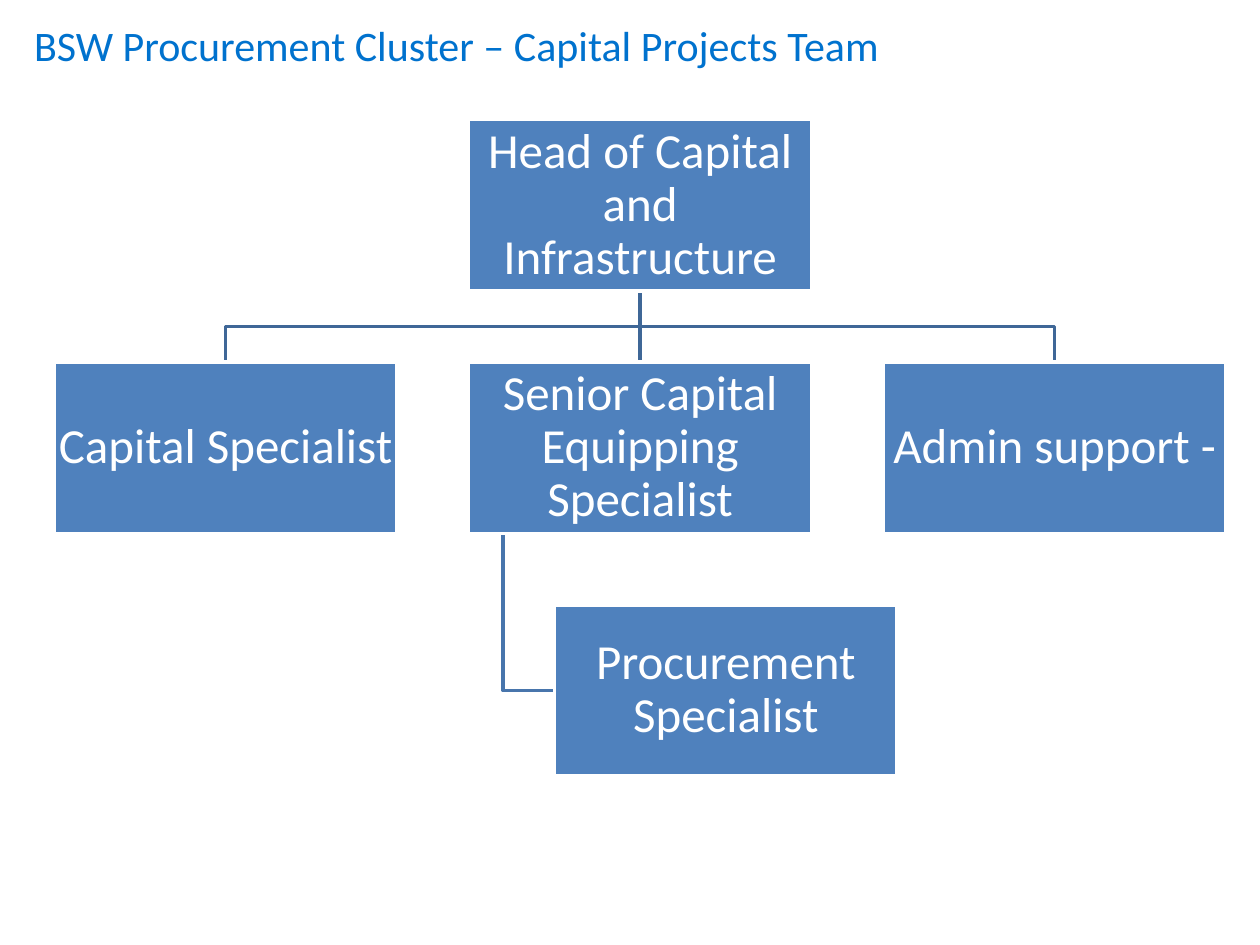
from pptx import Presentation
from pptx.dml.color import RGBColor
from pptx.enum.shapes import MSO_SHAPE
from pptx.enum.text import MSO_ANCHOR, PP_ALIGN
from pptx.util import Inches, Pt

RECT = MSO_SHAPE.RECTANGLE
MIDDLE = MSO_ANCHOR.MIDDLE
LEFT, CENTER = PP_ALIGN.LEFT, PP_ALIGN.CENTER

TITLE_BLUE = RGBColor(0x00, 0x72, 0xCE)
BOX_BLUE = RGBColor(0x4F, 0x81, 0xBD)
BRANCH_BLUE = RGBColor(0x3F, 0x67, 0x97)
ASSISTANT_BLUE = RGBColor(0x48, 0x75, 0xAC)
WHITE = RGBColor(0xFF, 0xFF, 0xFF)
FONT = "Calibri"

TITLE = "BSW Procurement Cluster – Capital Projects Team"
HEAD = "Head of Capital and Infrastructure"
REPORTS = ["Capital Specialist", "Senior Capital Equipping Specialist", "Admin support -"]
JUNIOR = "Procurement Specialist"

BOX_W, BOX_H = 2.72, 1.36
LEFT_X, TOP_Y = 0.43, 0.95
COL_STEP, ROW_STEP = 3.29, 1.925
INDENT = 0.68       # shift of the junior box from its manager's left edge
STEM_OFFSET = 0.27  # where the junior's line leaves its manager


def style_text(tf, text, size, color, align):
    tf.word_wrap = True
    tf.vertical_anchor = MIDDLE
    p = tf.paragraphs[0]
    p.text = text
    p.alignment = align
    p.font.name = FONT
    p.font.size = Pt(size)
    p.font.color.rgb = color
    return p


def add_line(slide, points, color):
    """Draw an open line through points given in inches."""
    points = [(Inches(x), Inches(y)) for x, y in points]
    builder = slide.shapes.build_freeform(*points[0])
    builder.add_line_segments(points[1:], close=False)
    sp = builder.convert_to_shape()
    sp.shadow.inherit = False
    sp.fill.background()
    sp.line.color.rgb = color
    sp.line.width = Pt(2)


def add_box(slide, x, y, text):
    sp = slide.shapes.add_shape(RECT, Inches(x), Inches(y), Inches(BOX_W), Inches(BOX_H))
    sp.shadow.inherit = False
    sp.fill.solid()
    sp.fill.fore_color.rgb = BOX_BLUE
    sp.line.color.rgb = WHITE
    sp.line.width = Pt(2)
    tf = sp.text_frame
    tf.margin_left = tf.margin_right = tf.margin_top = tf.margin_bottom = Inches(0.02)
    p = style_text(tf, text, 28, WHITE, CENTER)
    p.line_spacing = 0.9


def main():
    prs = Presentation()
    prs.slide_width, prs.slide_height = Inches(10), Inches(7.5)
    slide = prs.slides.add_slide(prs.slide_layouts[5])

    title = slide.shapes.title
    title.left, title.top = Inches(0.17), Inches(-0.27)
    title.width, title.height = Inches(9), Inches(1.25)
    style_text(title.text_frame, TITLE, 24, TITLE_BLUE, LEFT)

    columns = [LEFT_X + i * COL_STEP for i in range(len(REPORTS))]
    rows = [TOP_Y + i * ROW_STEP for i in range(3)]
    manager_x = columns[1]
    junior_x = manager_x + INDENT

    head_mid = manager_x + BOX_W / 2
    head_bottom = rows[0] + BOX_H
    branch_y = (head_bottom + rows[1]) / 2
    for x in columns:
        mid = x + BOX_W / 2
        bends = [(head_mid, branch_y), (mid, branch_y)] if x != manager_x else []
        add_line(slide, [(head_mid, head_bottom), *bends, (mid, rows[1])], BRANCH_BLUE)

    stem_x = manager_x + STEM_OFFSET
    junior_mid = rows[2] + BOX_H / 2
    add_line(slide, [(stem_x, rows[1] + BOX_H), (stem_x, junior_mid), (junior_x, junior_mid)],
             ASSISTANT_BLUE)

    add_box(slide, manager_x, rows[0], HEAD)
    for x, text in zip(columns, REPORTS):
        add_box(slide, x, rows[1], text)
    add_box(slide, junior_x, rows[2], JUNIOR)

    prs.save("out.pptx")


if __name__ == "__main__":
    main()
